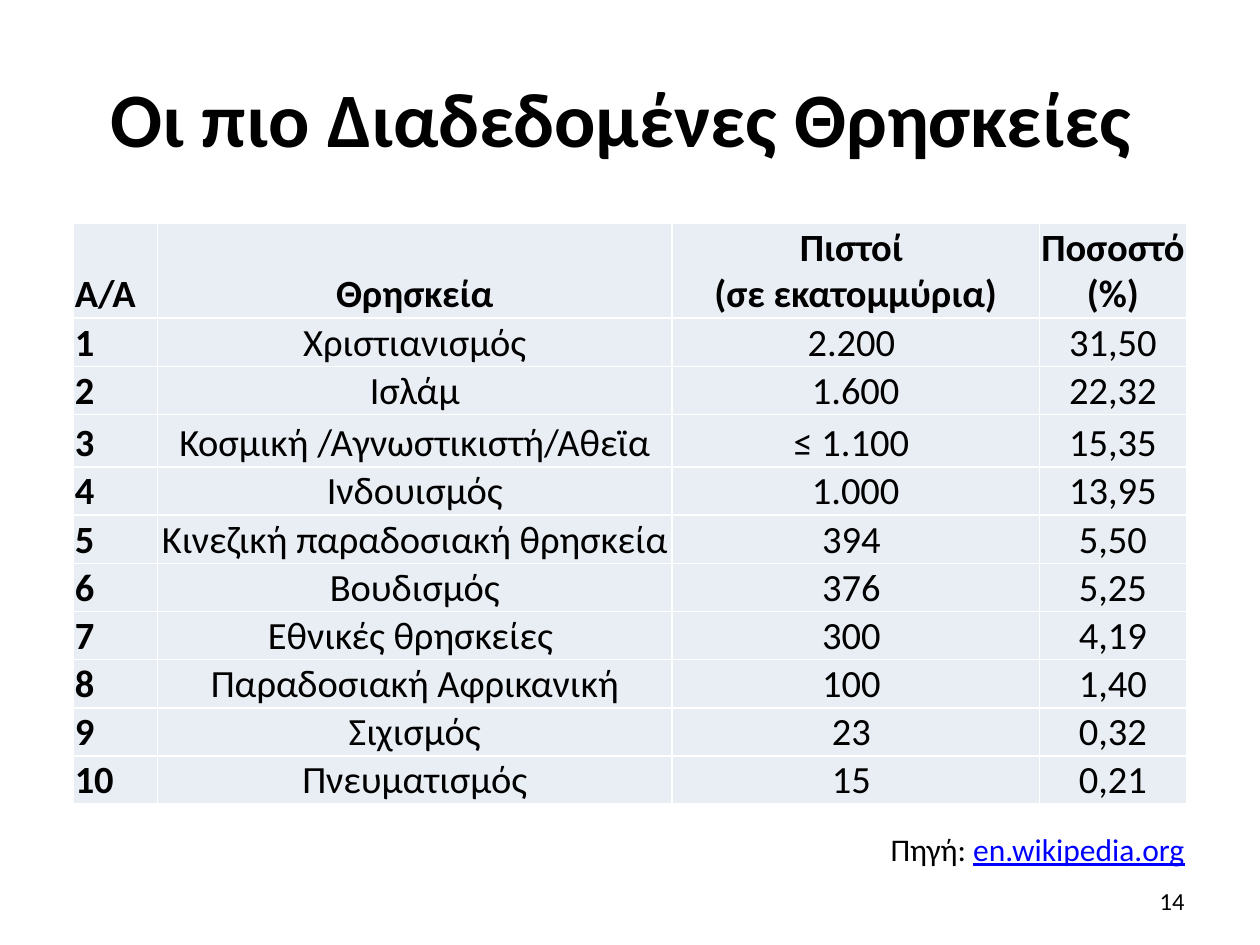
from lxml import etree
from pptx import Presentation
from pptx.dml.color import RGBColor
from pptx.enum import text as t
from pptx.oxml import ns
from pptx.util import Pt

BLACK = RGBColor(0, 0, 0)
BLUE = RGBColor(0, 0, 255)
PALE = RGBColor(0xE9, 0xED, 0xF4)
WHITE = RGBColor(255, 255, 255)
LEFT, MID, RIGHT = t.PP_ALIGN.LEFT, t.PP_ALIGN.CENTER, t.PP_ALIGN.RIGHT

COLS = [48, 294, 210, 84]
HEAD = ["Α/Α", "Θρησκεία", "Πιστοί \n(σε εκατομμύρια)", "Ποσοστό(%)"]
FAITHS = [
    ("Χριστιανισμός", "2.200 ", "31,50"),
    ("Ισλάμ", "1.600", "22,32"),
    ("Κοσμική /Αγνωστικιστή/Αθεϊα", "≤ 1.100 ", "15,35"),
    ("Ινδουισμός", "1.000", "13,95"),
    ("Κινεζική παραδοσιακή θρησκεία", "394 ", "5,50"),
    ("Βουδισμός", "376 ", "5,25"),
    ("Εθνικές θρησκείες ", "300 ", "4,19"),
    ("Παραδοσιακή Αφρικανική", "100 ", "1,40"),
    ("Σιχισμός", "23 ", "0,32"),
    ("Πνευματισμός", "15 ", "0,21"),
]
HEAD_H, ROW_H, TALL_H = 54, 27.5, 30
TALL_ROW = 3


def add_run(para, words, size=22, bold=False, color=BLACK, line=False):
    run = para.add_run()
    run.text = words
    font = run.font
    font.name, font.size, font.bold = "Calibri", Pt(size), bold
    font.color.rgb = color
    if line:
        font.underline = True


def write(frame, words, align=MID, **form):
    """Fill a text frame, one paragraph for each line of words."""
    frame.word_wrap = True
    for i, part in enumerate(words.split("\n")):
        para = frame.add_paragraph() if i else frame.paragraphs[0]
        para.alignment = align
        add_run(para, part, **form)


def add_text(slide, box, words, **form):
    frame = slide.shapes.add_textbox(*map(Pt, box)).text_frame
    frame.vertical_anchor = t.MSO_ANCHOR.MIDDLE
    write(frame, words, **form)
    return frame


def add_title(slide, words):
    title = slide.shapes.title
    title.left, title.top, title.width, title.height = map(Pt, (36, 21.6, 648, 90))
    title.text_frame.vertical_anchor = t.MSO_ANCHOR.MIDDLE
    write(title.text_frame, words, size=44, bold=True)


def set_edges(cell, color, width):
    props = cell._tc.get_or_add_tcPr()
    for i, side in enumerate(("lnL", "lnR", "lnT", "lnB")):
        line = etree.Element(ns.qn("a:" + side), w=str(Pt(width)))
        fill = etree.SubElement(line, ns.qn("a:solidFill"))
        etree.SubElement(fill, ns.qn("a:srgbClr"), val=str(color))
        props.insert(i, line)


def fill_cell(cell, words, **form):
    cell.margin_left = cell.margin_right = cell.margin_top = Pt(0.75)
    cell.margin_bottom = 0
    cell.vertical_anchor = t.MSO_ANCHOR.BOTTOM
    cell.fill.solid()
    cell.fill.fore_color.rgb = PALE
    set_edges(cell, WHITE, 1)
    write(cell.text_frame, words, **form)


def add_grid(slide):
    rows = [HEAD] + [(str(n), *faith) for n, faith in enumerate(FAITHS, 1)]
    highs = [HEAD_H] + [ROW_H] * len(FAITHS)
    highs[TALL_ROW] = TALL_H
    box = map(Pt, (42, 127.5, sum(COLS), sum(highs)))
    grid = slide.shapes.add_table(len(rows), len(COLS), *box).table
    for col, wide in zip(grid.columns, COLS):
        col.width = Pt(wide)
    for r, (row, high) in enumerate(zip(rows, highs)):
        grid.rows[r].height = Pt(high)
        for c, words in enumerate(row):
            fill_cell(grid.cell(r, c), words, align=MID if c else LEFT,
                      bold=r == 0 or c == 0)


def main():
    deck = Presentation()
    deck.slide_width, deck.slide_height = Pt(720), Pt(540)
    slide = deck.slides.add_slide(deck.slide_layouts[5])
    add_title(slide, "Οι πιο Διαδεδομένες Θρησκείες ")
    add_grid(slide)
    source = add_text(slide, (216, 470, 468, 30), "Πηγή: ", align=RIGHT, size=18)
    add_run(source.paragraphs[0], "en.wikipedia.org", size=18, color=BLUE, line=True)
    add_text(slide, (516, 500.4, 168, 28.8), "14", align=RIGHT, size=14)
    deck.save("out.pptx")


if __name__ == "__main__":
    main()
